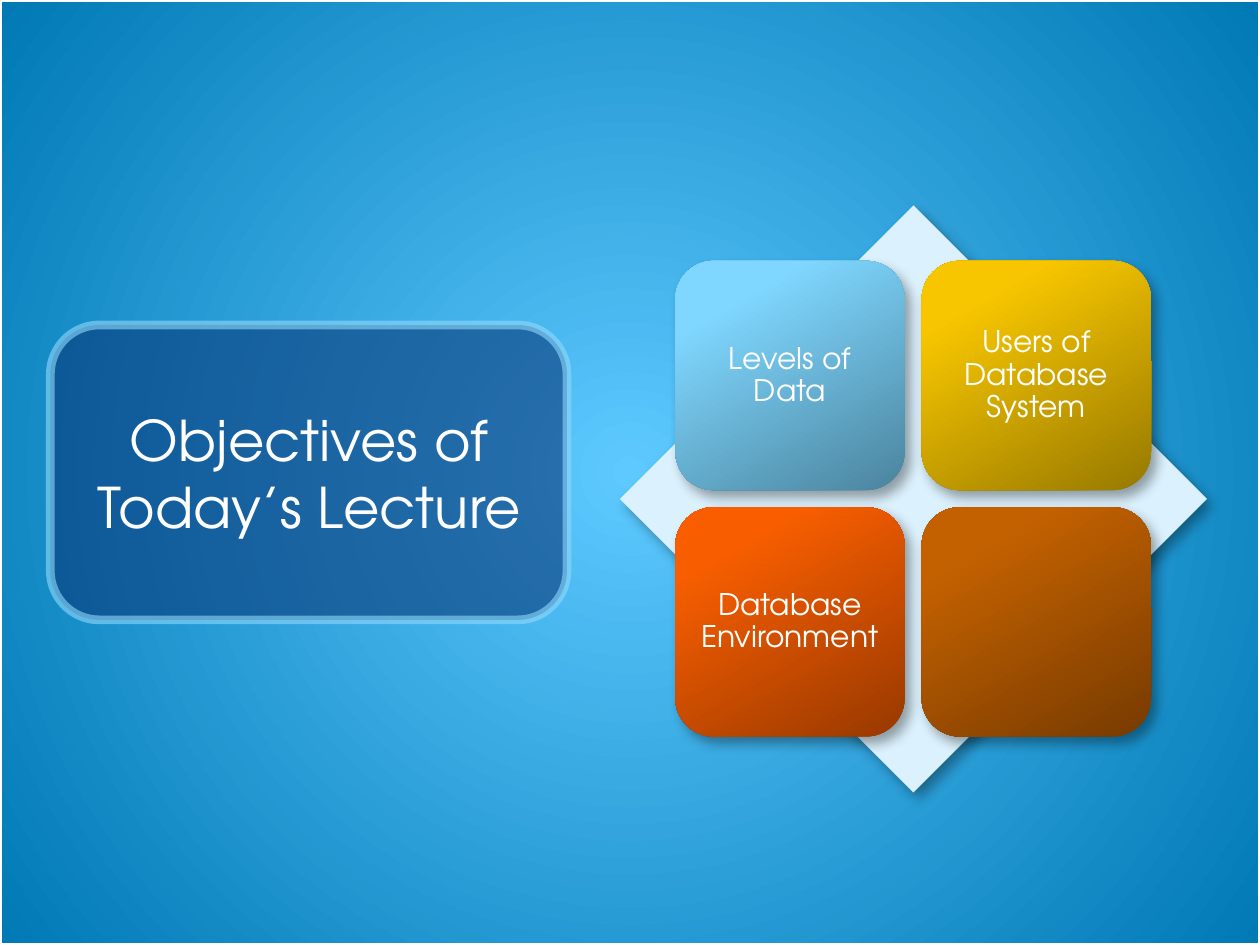
import pptx
from lxml import etree
from pptx.dml.color import RGBColor
from pptx.enum.shapes import MSO_SHAPE
from pptx.enum.text import MSO_ANCHOR, MSO_AUTO_SIZE, PP_ALIGN
from pptx.oxml import parse_xml
from pptx.oxml.ns import nsdecls, qn
from pptx.util import Inches, Pt

# Content: label and gradient stops of each tile, row by row
TITLE = "Objectives of Today’s Lecture"
TILES = [
    ("Levels of Data", [(0, "4B849E"), (80, "7FD7FF"), (100, "81D7FF")]),
    ("Users of Database System", [(0, "977900"), (80, "F7C600"), (100, "F8C700")]),
    ("Database Environment", [(0, "983900"), (80, "F85E00"), (100, "F95E00")]),
    ("", [(0, "773B00"), (80, "C36100"), (100, "C46100")]),
]

THEME = {
    "font": "TeX Gyre Adventor", "title_size": 32, "tile_size": 17,
    "text": "FFFFFF", "frame": "FFFFFF", "diamond": "DBF1FD",
    "panel": "073779", "panel_line": "8FD9FB", "panel_alpha": 60,
    "background": [(0, "5DC9FF"), (100, "0079B5")],
}

# Layout in inches
WIDTH, HEIGHT = 10, 7.5
PANEL = (0.4, 2.58, 4.1, 2.34)
TITLE_BOX = (0.58, 2.75, 3.75, 2)
DIAMOND = (4.92, 1.63, 4.66, 4.66)
TILE_LEFT, TILE_TOP, TILE_SIZE, TILE_STEP = 5.36, 2.07, 1.82, 1.955


def gradient(stops, direction):
    gs = "".join(f'<a:gs pos="{pos * 1000}"><a:srgbClr val="{color}"/></a:gs>'
                 for pos, color in stops)
    return parse_xml(f'<a:gradFill {nsdecls("a")} rotWithShape="1">'
                     f'<a:gsLst>{gs}</a:gsLst>{direction}</a:gradFill>')


LINEAR = '<a:lin ang="14400000" scaled="0"/>'
RADIAL = ('<a:path path="circle"><a:fillToRect l="50000" t="50000" '
          'r="50000" b="50000"/></a:path>')


def replace_fill(parent, fill):
    solid = parent.find(qn("a:solidFill"))
    parent.replace(solid, fill)


def add_shape(kind, box, fill=None):
    shape = s.shapes.add_shape(kind, *map(Inches, box))
    shape.shadow.inherit = False
    shape.line.fill.background()
    if fill:
        shape.fill.solid()
        shape.fill.fore_color.rgb = RGBColor.from_string(fill)
    else:
        shape.fill.background()
    return shape


def set_line(shape, color, width):
    shape.line.color.rgb = RGBColor.from_string(color)
    shape.line.width = Pt(width)


def set_alpha(shape, percent):
    for color in shape._element.spPr.iter(qn("a:srgbClr")):
        etree.SubElement(color, qn("a:alpha")).set("val", str(percent * 1000))


def add_shadow(shape):
    effects = shape._element.spPr.find(qn("a:effectLst"))
    effects.append(parse_xml(
        f'<a:outerShdw {nsdecls("a")} blurRad="{Pt(7)}" dist="{Pt(5)}" dir="3000000" '
        'algn="tl" rotWithShape="0"><a:srgbClr val="000000">'
        '<a:alpha val="35000"/></a:srgbClr></a:outerShdw>'))


def set_text(shape, text, size):
    tf = shape.text_frame
    tf.word_wrap = True
    tf.auto_size = MSO_AUTO_SIZE.NONE
    tf.vertical_anchor = MSO_ANCHOR.MIDDLE
    tf.text = text
    p = tf.paragraphs[0]
    p.alignment = PP_ALIGN.CENTER
    p.font.name = THEME["font"]
    p.font.size = Pt(size)
    p.font.color.rgb = RGBColor.from_string(THEME["text"])
    return tf


prs = pptx.Presentation()
prs.slide_width, prs.slide_height = Inches(WIDTH), Inches(HEIGHT)
s = prs.slides.add_slide(prs.slide_layouts[5])

# Background and white frame
s.background.fill.solid()
replace_fill(s._element.find(".//" + qn("p:bgPr")),
             gradient(THEME["background"], RADIAL))
frame = add_shape(MSO_SHAPE.RECTANGLE, (0, 0, WIDTH, HEIGHT))
set_line(frame, THEME["frame"], 2)

# Title on its translucent panel
panel = add_shape(MSO_SHAPE.ROUNDED_RECTANGLE, PANEL, THEME["panel"])
set_line(panel, THEME["panel_line"], 5)
set_alpha(panel, THEME["panel_alpha"])
title = s.shapes.title
title.left, title.top, title.width, title.height = map(Inches, TITLE_BOX)
set_text(title, TITLE, THEME["title_size"])
panel._element.addnext(title._element)

# Diamond behind the two-by-two tiles
add_shadow(add_shape(MSO_SHAPE.DIAMOND, DIAMOND, THEME["diamond"]))
for i, (label, stops) in enumerate(TILES):
    row, col = divmod(i, 2)
    box = (TILE_LEFT + col * TILE_STEP, TILE_TOP + row * TILE_STEP, TILE_SIZE, TILE_SIZE)
    tile = add_shape(MSO_SHAPE.ROUNDED_RECTANGLE, box, stops[-1][1])
    replace_fill(tile._element.spPr, gradient(stops, LINEAR))
    add_shadow(tile)
    if label:
        tf = set_text(tile, label, THEME["tile_size"])
        tf.margin_left = tf.margin_right = tf.margin_top = tf.margin_bottom = Inches(0.07)
        tf.paragraphs[0].line_spacing = 0.9

prs.save("out.pptx")
